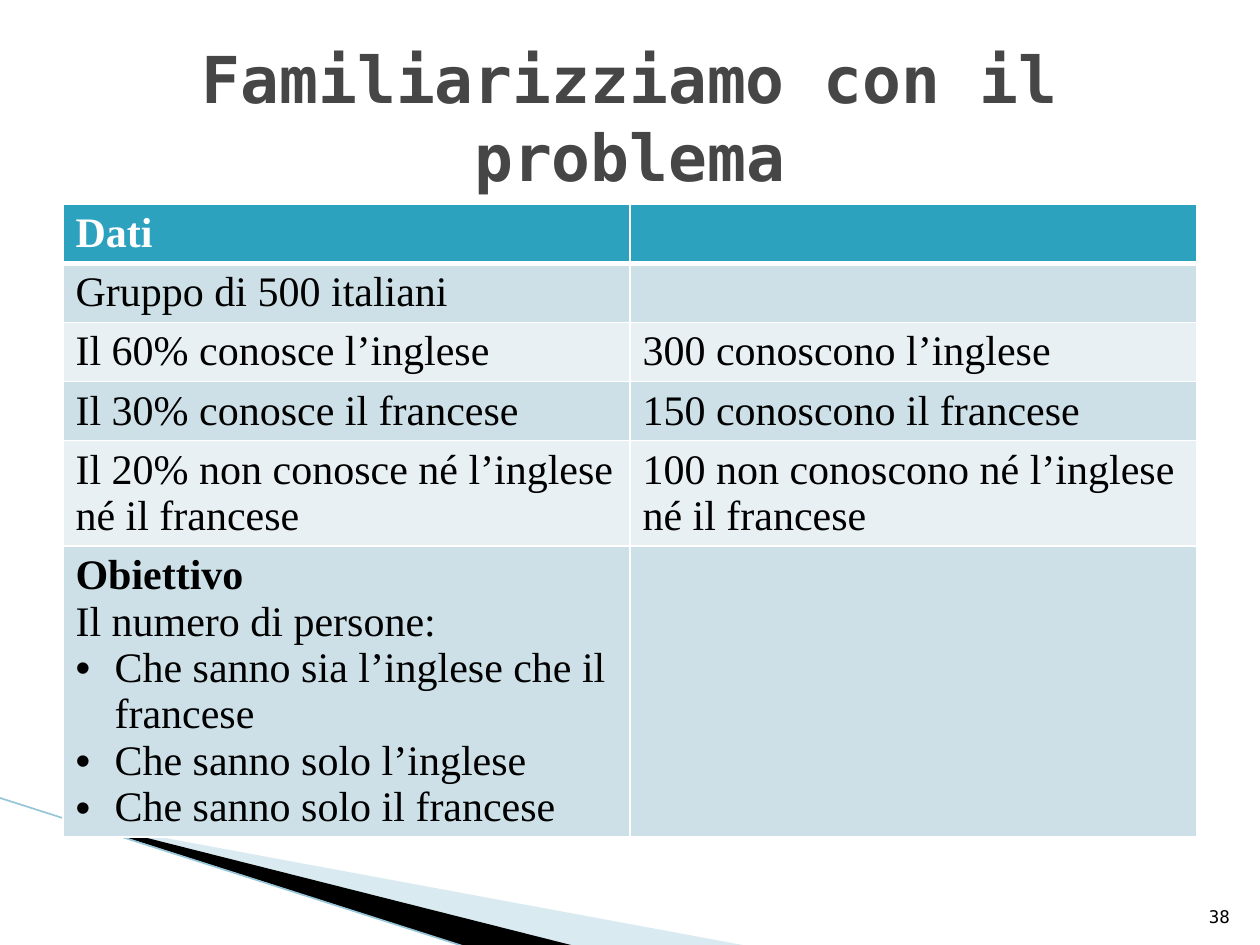
from lxml.etree import SubElement
from pptx import Presentation
from pptx.dml.color import RGBColor
from pptx.enum.shapes import MSO_CONNECTOR
from pptx.enum.text import MSO_ANCHOR, PP_ALIGN
from pptx.oxml import parse_xml
from pptx.oxml.ns import nsdecls, qn
from pptx.util import Inches, Pt

WHITE = RGBColor(0xFF, 0xFF, 0xFF)
BLACK = RGBColor(0, 0, 0)
TITLE_GREY = RGBColor(0x46, 0x46, 0x46)
HEADER_TEAL = RGBColor(0x2D, 0xA2, 0xBF)
BAND_DARK = RGBColor(0xCD, 0xE0, 0xE8)
BAND_LIGHT = RGBColor(0xE8, 0xF0, 0xF4)
SWOOSH_BLUE = RGBColor(0xA0, 0xCB, 0xDC)
LINE_BLUE = RGBColor(0x97, 0xC5, 0xD8)
MONO, SERIF = "DejaVu Sans Mono", "Times New Roman"

# Content: each cell is a list of (text, style) paragraphs
TITLE = "Familiarizziamo con il problema"
PAGE_NUMBER = "38"
ROWS = [
    ([("Dati", "bold")], []),
    ([("Gruppo di 500 italiani", "plain")], []),
    ([("Il 60% conosce l’inglese", "plain")],
     [("300 conoscono l’inglese", "plain")]),
    ([("Il 30% conosce il francese", "plain")],
     [("150 conoscono il francese", "plain")]),
    ([("Il 20% non conosce né l’inglese né il francese", "plain")],
     [("100 non conoscono né l’inglese né il francese", "plain")]),
    ([("Obiettivo", "bold"),
      ("Il numero di persone:", "plain"),
      ("Che sanno sia l’inglese che il francese", "bullet"),
      ("Che sanno solo l’inglese", "bullet"),
      ("Che sanno solo il francese", "bullet")], []),
]
# Corner wedges: outline, colour, opacity in percent
WEDGES = [
    ([(0.55, 6.51), (5.95, 7.51), (4.56, 7.51), (0.55, 6.5)], SWOOSH_BLUE, 40),
    ([(0.53, 6.49), (4.57, 7.51), (3.72, 7.52), (0.54, 6.5)], BLACK, 100),
]

prs = Presentation()
prs.slide_width, prs.slide_height = Inches(10), Inches(7.5)
slide = prs.slides.add_slide(prs.slide_layouts[6])
MARGIN = prs.slide_width // 20
CONTENT_WIDTH = prs.slide_width - 2 * MARGIN
ROW_HEIGHT = Inches(0.41)


def style_font(paragraph, name, size, color, bold=False):
    font = paragraph.font
    font.name, font.size, font.bold = name, Pt(size), bold
    font.color.rgb = color


def add_label(text, box, anchor, align, size, color, bold=False):
    frame = slide.shapes.add_textbox(*box).text_frame
    frame.word_wrap = True
    frame.vertical_anchor = anchor
    paragraph = frame.paragraphs[0]
    paragraph.text, paragraph.alignment = text, align
    style_font(paragraph, MONO, size, color, bold)


def add_bullet(paragraph):
    props = paragraph._p.get_or_add_pPr()
    props.set("marL", str(Inches(0.31)))
    props.set("indent", str(-Inches(0.31)))
    SubElement(props, qn("a:buFont")).set("typeface", "Arial")
    SubElement(props, qn("a:buChar")).set("char", "•")


def add_borders(cell, bottom_width):
    props = cell._tc.get_or_add_tcPr()
    for side, width in (("L", 1), ("R", 1), ("T", 1), ("B", bottom_width)):
        props.append(parse_xml(
            f'<a:ln{side} {nsdecls("a")} w="{Pt(width)}"><a:solidFill>'
            f'<a:srgbClr val="{WHITE}"/></a:solidFill></a:ln{side}>'))


# Corner decoration
for outline, color, opacity in WEDGES:
    points = [(Inches(x), Inches(y)) for x, y in outline]
    builder = slide.shapes.build_freeform(*points[0])
    builder.add_line_segments(points[1:], close=True)
    wedge = builder.convert_to_shape()
    wedge.shadow.inherit = False
    wedge.fill.solid()
    wedge.fill.fore_color.rgb = color
    wedge.line.fill.background()
    if opacity < 100:
        color_node = wedge._element.spPr.find(".//" + qn("a:srgbClr"))
        SubElement(color_node, qn("a:alpha")).set("val", str(opacity * 1000))

edge = slide.shapes.add_connector(
    MSO_CONNECTOR.STRAIGHT, Inches(-0.01), Inches(6.33), Inches(3.71), Inches(7.52))
edge.line.color.rgb = LINE_BLUE
edge.line.width = Pt(0.95)
SubElement(edge._element.spPr, qn("a:effectLst"))

# Table of data and objective
table = slide.shapes.add_table(
    len(ROWS), 2, MARGIN, Inches(1.62), CONTENT_WIDTH, ROW_HEIGHT * len(ROWS)).table
for r, row in enumerate(ROWS):
    is_header = r == 0
    band = HEADER_TEAL if is_header else (BAND_LIGHT, BAND_DARK)[r % 2]
    for c, content in enumerate(row):
        cell = table.cell(r, c)
        add_borders(cell, 3 if is_header else 1)
        cell.fill.solid()
        cell.fill.fore_color.rgb = band
        frame = cell.text_frame
        for i, (text, style) in enumerate(content):
            paragraph = frame.add_paragraph() if i else frame.paragraphs[0]
            paragraph.text = text
            if style == "bullet":
                add_bullet(paragraph)
            style_font(paragraph, SERIF, 24, WHITE if is_header else BLACK,
                       style == "bold")

# Title and page number
add_label(TITLE, (MARGIN, Inches(0.3), CONTENT_WIDTH, Inches(1.25)),
          MSO_ANCHOR.MIDDLE, PP_ALIGN.CENTER, 36.9, TITLE_GREY, True)
add_label(PAGE_NUMBER, (Inches(9.46), Inches(7.01), Inches(0.4), Inches(0.4)),
          MSO_ANCHOR.BOTTOM, PP_ALIGN.RIGHT, 10, BLACK)

prs.save("out.pptx")
